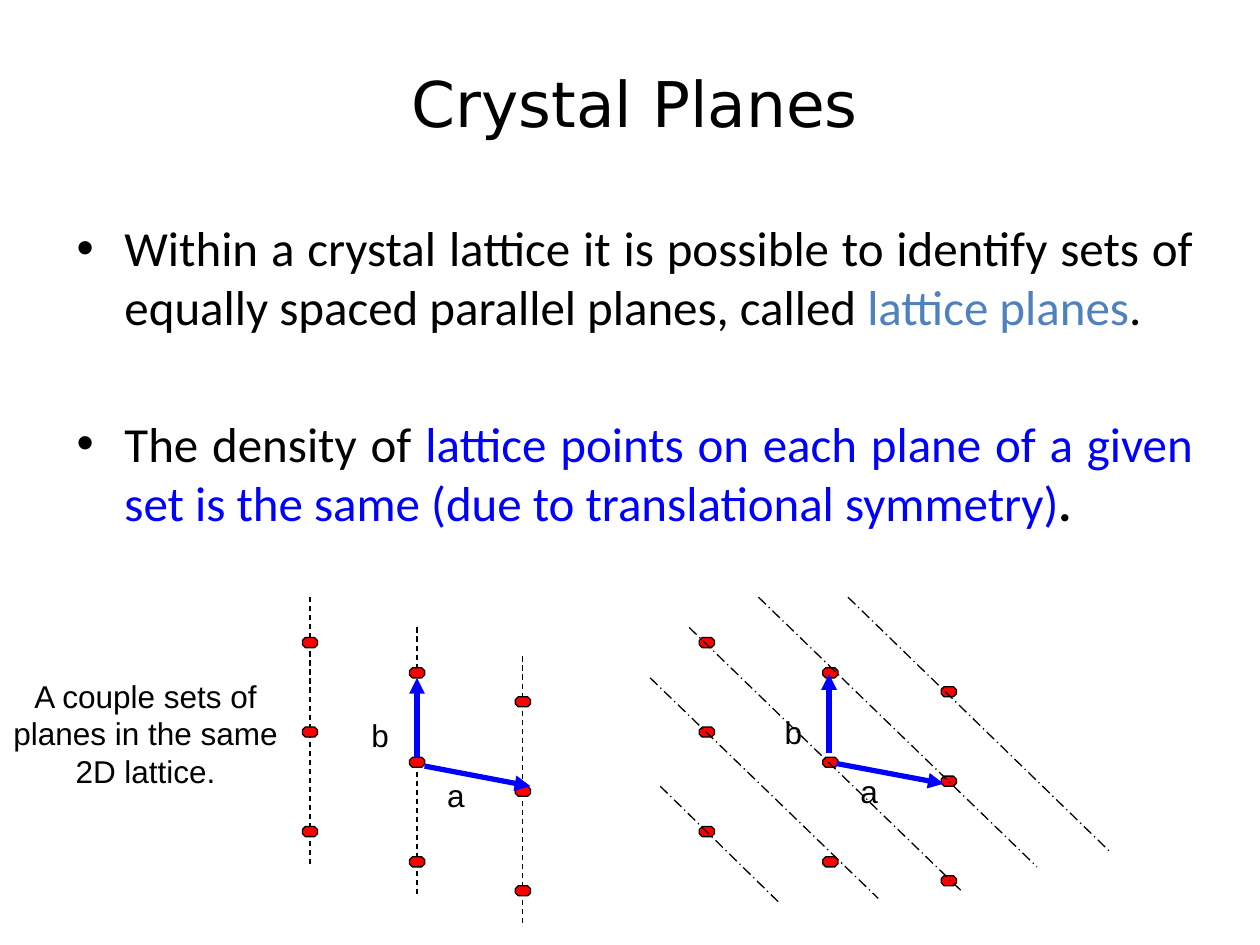
from lxml import etree
from pptx import Presentation
from pptx.dml.color import RGBColor
from pptx.enum.dml import MSO_LINE
from pptx.enum.shapes import MSO_CONNECTOR, MSO_SHAPE
from pptx.enum.text import MSO_ANCHOR, PP_ALIGN
from pptx.oxml.ns import qn
from pptx.util import Inches, Pt

BLACK = RGBColor(0x00, 0x00, 0x00)
BLUE = RGBColor(0x00, 0x00, 0xFF)
STEEL = RGBColor(0x4F, 0x81, 0xBD)
RED = RGBColor(0xFF, 0x00, 0x00)

TITLE = "Crystal Planes"
# Each bullet is a list of (text, colour, bold)
BULLETS = [
    [("Within a crystal lattice it is possible to identify sets of equally "
      "spaced parallel planes, called ", BLACK, False),
     ("lattice planes", STEEL, False),
     (".", BLACK, False)],
    [("The density of ", BLACK, False),
     ("lattice points on each plane of a given set is the same "
      "(due to translational symmetry)", BLUE, False),
     (".", BLACK, True)],
]
CAPTION = ["A couple sets of", "planes in the same", "2D lattice."]

POINT_W, POINT_H = 0.12, 0.08
ROW_OFFSETS = [0, 0.71, 1.5]
PLANE_LENGTH = 2.13
PLANE_LEAD = 0.32  # vertical plane above its first point

# Columns are (left, top) of the first lattice point; vectors are (from, to)
VERTICAL_SET = {
    "columns": [(2.4, 5.06), (3.25, 5.3), (4.09, 5.53)],
    "vectors": [((3.31, 6.01), (3.31, 5.38)), ((3.37, 6.08), (4.21, 6.24))],
    "labels": [("b", 2.85, 5.63), ("a", 3.45, 6.11)],
}
DIAGONAL_SET = {
    "columns": [(5.55, 5.06), (6.53, 5.3), (7.47, 5.45)],
    "planes": [((5.47, 4.98), (7.64, 7.08)), ((6.02, 4.74), (8.23, 6.88)),
               ((6.73, 4.74), (8.82, 6.77)), ((5.16, 5.38), (6.97, 7.13)),
               ((5.24, 6.24), (6.19, 7.17))],
    "vectors": [((6.58, 5.98), (6.58, 5.35)), ((6.64, 6.06), (7.49, 6.22))],
    "labels": [("b", 6.13, 5.61), ("a", 6.73, 6.08)],
}


def add_text(shapes, place, lines, font, size, align=PP_ALIGN.LEFT, wrap=False):
    box = shapes.add_textbox(*map(Inches, place))
    frame = box.text_frame
    frame.word_wrap = wrap
    frame.text = "\n".join(lines)
    for para in frame.paragraphs:
        para.alignment = align
        for span in para.runs:
            span.font.name = font
            span.font.size = Pt(size)
            span.font.color.rgb = BLACK
    return frame


def add_bullets(page):
    box = page.shapes.add_textbox(*map(Inches, (0.51, 1.68, 9.06, 1.9)))
    frame = box.text_frame
    frame.word_wrap = True
    for index, pieces in enumerate(BULLETS):
        para = frame.add_paragraph() if index else frame.paragraphs[0]
        para.alignment = PP_ALIGN.JUSTIFY
        para.space_before = Pt(44.5 if index else 0)
        for text, color, bold in pieces:
            span = para.add_run()
            span.text = text
            span.font.name = "Calibri"
            span.font.size = Pt(28)
            span.font.bold = bold
            span.font.color.rgb = color
        props = para._p.get_or_add_pPr()
        props.set("marL", str(Inches(0.38)))
        props.set("indent", str(Inches(-0.38)))
        etree.SubElement(props, qn("a:buFont")).set("typeface", "Arial")
        etree.SubElement(props, qn("a:buChar")).set("char", "•")


def add_line(shapes, start, end, color, width, dash=None, arrow=False):
    line = shapes.add_connector(MSO_CONNECTOR.STRAIGHT,
                                *map(Inches, (*start, *end)))
    line.line.color.rgb = color
    line.line.width = Pt(width)
    if dash:
        line.line.dash_style = dash
    if arrow:
        etree.SubElement(line.line._get_or_add_ln(),
                         qn("a:tailEnd")).set("type", "triangle")
    etree.SubElement(line._element.spPr, qn("a:effectLst"))


def add_points(shapes, left, top):
    """Draw one column of lattice points."""
    for offset in ROW_OFFSETS:
        point = shapes.add_shape(
            MSO_SHAPE.OCTAGON,
            *map(Inches, (left, top + offset, POINT_W, POINT_H)))
        point.adjustments[0] = 0.293
        point.shadow.inherit = False
        point.fill.solid()
        point.fill.fore_color.rgb = RED
        point.line.color.rgb = BLACK
        point.line.width = Pt(0.75)


def add_vectors(shapes, lattice):
    for start, end in lattice["vectors"]:
        add_line(shapes, start, end, BLUE, 3, arrow=True)
    for name, left, top in lattice["labels"]:
        add_text(shapes, (left, top, 0.34, 0.4), [name], "Arial", 18)


def add_vertical_set(page):
    shapes = page.shapes.add_group_shape().shapes
    for left, top in VERTICAL_SET["columns"]:
        x, y = left + POINT_W / 2, top - PLANE_LEAD
        add_line(shapes, (x, y), (x, y + PLANE_LENGTH), BLACK, 0.75,
                 MSO_LINE.DASH)
        add_points(shapes, left, top)
    add_vectors(shapes, VERTICAL_SET)


def add_diagonal_set(page):
    shapes = page.shapes.add_group_shape().shapes
    for left, top in DIAGONAL_SET["columns"]:
        add_points(shapes, left, top)
    for start, end in DIAGONAL_SET["planes"]:
        add_line(shapes, start, end, BLACK, 0.75, MSO_LINE.LONG_DASH_DOT)
    add_vectors(shapes, DIAGONAL_SET)


def main():
    deck = Presentation()
    deck.slide_width, deck.slide_height = Inches(10), Inches(7.5)
    page = deck.slides.add_slide(deck.slide_layouts[6])
    title = add_text(page.shapes, (0.54, 0.19, 9, 1.25), [TITLE],
                     "DejaVu Sans", 36, PP_ALIGN.CENTER, wrap=True)
    title.vertical_anchor = MSO_ANCHOR.MIDDLE
    add_bullets(page)
    add_vertical_set(page)
    add_diagonal_set(page)
    add_text(page.shapes, (-0.04, 5.32, 2.39, 1.01), CAPTION, "Arial", 18,
             PP_ALIGN.CENTER)
    deck.save("out.pptx")


if __name__ == "__main__":
    main()
